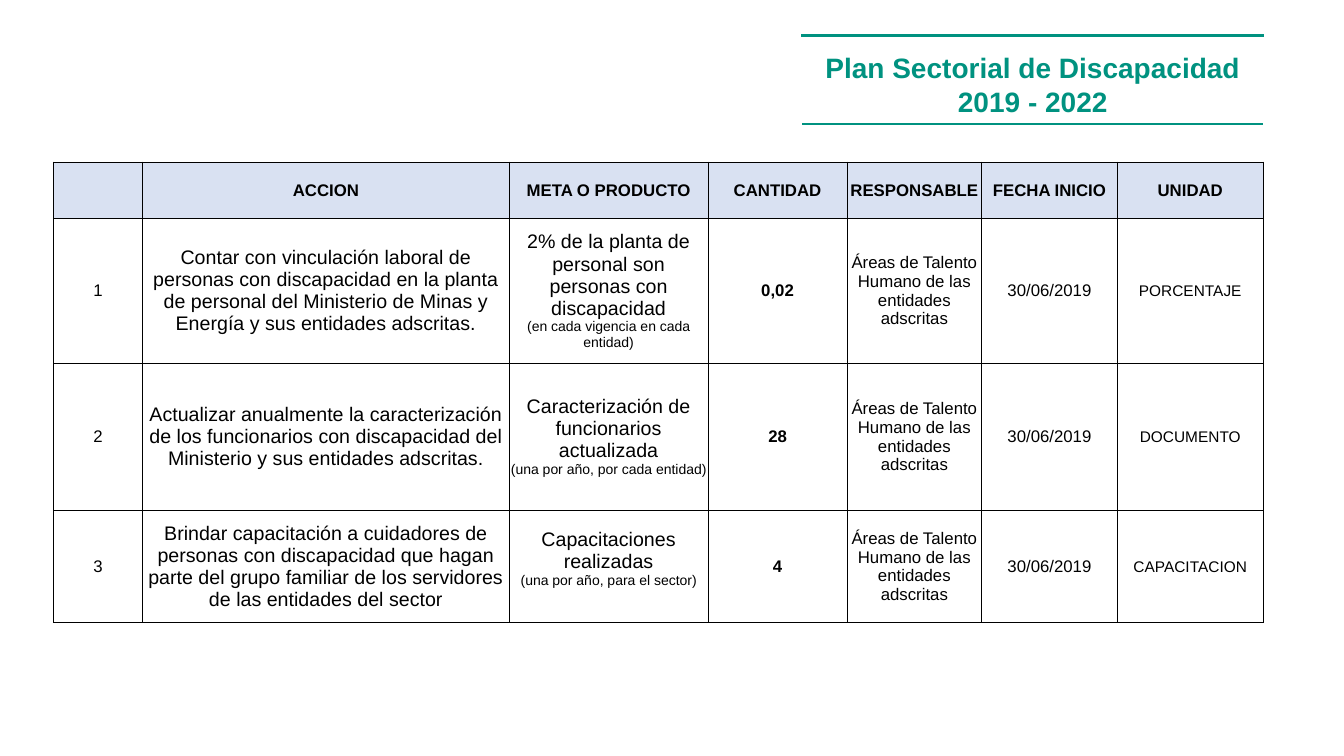
from dataclasses import dataclass

from lxml.etree import SubElement
from pptx import Presentation
from pptx.dml.color import RGBColor as Color
from pptx.enum.shapes import MSO_CONNECTOR as Connector
from pptx.enum.text import MSO_ANCHOR as Anchor, MSO_AUTO_SIZE as AutoSize, PP_ALIGN as Align
from pptx.oxml.ns import qn
from pptx.util import Emu, Inches, Pt


@dataclass(frozen=True)
class Theme:
    font: str = "Arial"
    green: str = "009280"
    black: str = "000000"
    header: str = "D9E1F2"
    title: int = 20
    action: int = 14
    label: int = 12
    unit: int = 11
    note: int = 10
    rule: float = 2
    border: float = 0.5
    outer: float = 1


theme = Theme()
deck = Presentation()
deck.slide_width, deck.slide_height = Inches(13.33), Inches(7.5)
page = deck.slides.add_slide(deck.slide_layouts[5])


def share(side, percent):
    return Emu(round(side * percent / 100))


def write(para, text, size, bold=False, color=theme.black):
    para.alignment = Align.CENTER
    span = para.add_run()
    span.text = text
    span.font.name, span.font.size, span.font.bold = theme.font, Pt(size), bold
    span.font.color.rgb = Color.from_string(color)


wide, high = deck.slide_width, deck.slide_height

# Title between two green rules
for left, right, top in ((59.7, 93.98, 16.4), (59.63, 94.05, 4.67)):
    y = share(high, top)
    rule = page.shapes.add_connector(Connector.STRAIGHT, share(wide, left), y, share(wide, right), y)
    rule.line.color.rgb = Color.from_string(theme.green)
    rule.line.width = Pt(theme.rule)
    SubElement(rule._element.spPr, qn("a:effectLst"))

title = page.shapes.title
title.left, title.top = share(wide, 60.53), share(high, 6)
title.width, title.height = share(wide, 32.63), share(high, 10.27)
frame = title.text_frame
frame.word_wrap = False
frame.auto_size = AutoSize.SHAPE_TO_FIT_TEXT
frame.vertical_anchor = Anchor.TOP
write(frame.paragraphs[0], "Plan Sectorial de Discapacidad", theme.title, True, theme.green)
write(frame.add_paragraph(), "2019 - 2022", theme.title, True, theme.green)

# Table content: action, product, note, quantity, unit
headings = ["", "ACCION", "META O PRODUCTO", "CANTIDAD", "RESPONSABLE", "FECHA INICIO", "UNIDAD"]
responsible = "Áreas de Talento Humano de las entidades adscritas"
start_date = "30/06/2019"
plan = [
    ("Contar con vinculación laboral de personas con discapacidad en la planta de personal "
     "del Ministerio de Minas y Energía y sus entidades adscritas.",
     "2% de la planta de personal son personas con discapacidad",
     "(en cada vigencia en cada entidad)", "0,02", "PORCENTAJE"),
    ("Actualizar anualmente la caracterización de los funcionarios con discapacidad "
     "del Ministerio y sus entidades adscritas.",
     "Caracterización de funcionarios actualizada",
     "(una por año, por cada entidad)", "28", "DOCUMENTO"),
    ("Brindar capacitación a cuidadores de personas con discapacidad que hagan parte "
     "del grupo familiar de los servidores de las entidades del sector",
     "Capacitaciones realizadas",
     "(una por año, para el sector)", "4", "CAPACITACION"),
]

# Each cell is a list of paragraphs: text, size, bold
rows = [[[(heading, theme.label, True)] if heading else [] for heading in headings]]
for number, (action, product, note, quantity, unit) in enumerate(plan, 1):
    rows.append([
        [(str(number), theme.label, False)],
        [(action, theme.action, False)],
        [(product, theme.action, False), (note, theme.note, False)],
        [(quantity, theme.label, True)],
        [(responsible, theme.label, False)],
        [(start_date, theme.label, False)],
        [(unit, theme.unit, False)],
    ])

# Table grid, in shares of the slide
column_shares = [6.62, 27.3, 14.77, 10.38, 9.98, 10.13, 10.82]
row_shares = [7.47, 19.07, 19.55, 14.8]
table = page.shapes.add_table(
    len(rows), len(headings), share(wide, 3.98), share(high, 21.47),
    share(wide, sum(column_shares)), share(high, sum(row_shares))).table
for column, percent in zip(table.columns, column_shares):
    column.width = share(wide, percent)
for row, percent in zip(table.rows, row_shares):
    row.height = share(high, percent)

# Cells: borders, fill and text
for r, row in enumerate(rows):
    for c, paragraphs in enumerate(row):
        cell = table.cell(r, c)
        cell.margin_left = cell.margin_right = cell.margin_top = cell.margin_bottom = 0
        cell.vertical_anchor = Anchor.MIDDLE
        properties = cell._tc.get_or_add_tcPr()
        for edge in "LRTB":
            outer = r == 0 and (edge == "T" or (edge == "L" and c == 0))
            width = Pt(theme.outer if outer else theme.border)
            border = SubElement(properties, qn(f"a:ln{edge}"), w=str(width))
            SubElement(SubElement(border, qn("a:solidFill")), qn("a:srgbClr"), val=theme.black)
        if r == 0:
            cell.fill.solid()
            cell.fill.fore_color.rgb = Color.from_string(theme.header)
        else:
            cell.fill.background()
        for index, (text, size, bold) in enumerate(paragraphs):
            frame = cell.text_frame
            para = frame.add_paragraph() if index else frame.paragraphs[0]
            write(para, text, size, bold)

# The last product sits a little above the middle of its cell
table.cell(3, 2).margin_bottom = share(high, 2.1)

deck.save("out.pptx")
